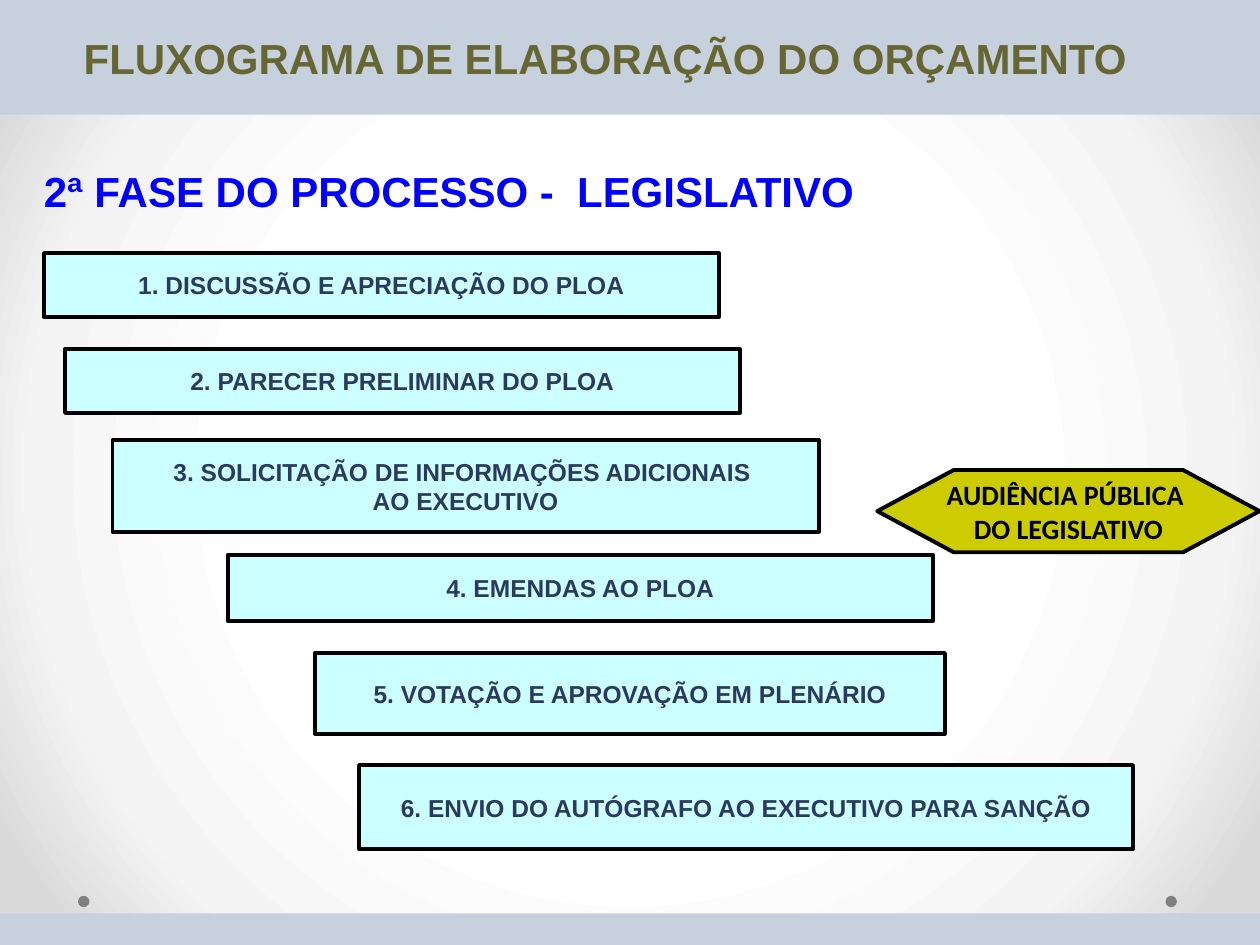
from pptx import Presentation
from pptx.dml.color import RGBColor
from pptx.enum.shapes import MSO_SHAPE as SHAPE
from pptx.enum.text import MSO_ANCHOR as ANCHOR, PP_ALIGN as ALIGN
from pptx.oxml import parse_xml
from pptx.oxml.ns import nsdecls, qn
from pptx.util import Pt

BAND = RGBColor(0xC7, 0xD1, 0xDE)
DOT = RGBColor(0x80, 0x80, 0x80)
OLIVE = RGBColor(0x66, 0x66, 0x33)
BLUE = RGBColor(0x00, 0x00, 0xFF)
CYAN = RGBColor(0xCC, 0xFF, 0xFF)
NAVY = RGBColor(0x2C, 0x39, 0x5E)
MUSTARD = RGBColor(0xCC, 0xCC, 0x00)
BLACK = RGBColor(0x00, 0x00, 0x00)


def add_block(kind, x, y, w, h, fill, outlined=False):
    sp = s.shapes.add_shape(kind, Pt(x), Pt(y), Pt(w), Pt(h))
    sp.shadow.inherit = False
    sp.fill.solid()
    sp.fill.fore_color.rgb = fill
    if outlined:
        sp.line.color.rgb = BLACK
        sp.line.width = Pt(2.25)
    else:
        sp.line.fill.background()
    return sp


def write(sp, text, size=14, color=NAVY, font="Arial", align=ALIGN.CENTER,
          anchor=ANCHOR.MIDDLE, wrap=False):
    """Fill a shape with bold text, one paragraph per line."""
    tf = sp.text_frame
    tf.word_wrap = wrap
    tf.vertical_anchor = anchor
    tf.text = text
    for p in tf.paragraphs:
        p.alignment = align
        f = p.font
        f.name, f.size, f.bold = font, Pt(size), True
        f.color.rgb = color


prs = Presentation()
prs.slide_width, prs.slide_height = Pt(720), Pt(540)
s = prs.slides.add_slide(prs.slide_layouts[6])

# Background: white centre fading to grey corners
s.background.fill.gradient()
grad = s.element.find(".//" + qn("a:gradFill"))
stops = "".join(
    f'<a:gs pos="{pos}000"><a:srgbClr val="{color}"/></a:gs>'
    for pos, color in ((50, "FFFFFF"), (76, "F4F4F4"), (92, "DADADA")))
grad.getparent().replace(grad, parse_xml(
    f'<a:gradFill {nsdecls("a")} rotWithShape="1"><a:gsLst>{stops}</a:gsLst>'
    '<a:path path="circle"><a:fillToRect l="50000" t="50000" r="50000" b="50000"/>'
    '</a:path></a:gradFill>'))

for x in (666, 44.6):
    add_block(SHAPE.OVAL, x, 511.9, 6.5, 6.5, DOT)

# Bands and headings
for y, h in ((0, 65.5), (522, 20)):
    add_block(SHAPE.RECTANGLE, 0, y, 720, h, BAND)

title = s.shapes.add_textbox(Pt(-10.8), Pt(15.1), Pt(720), Pt(36.7))
write(title, "FLUXOGRAMA DE ELABORAÇÃO DO ORÇAMENTO ", size=24, color=OLIVE,
      anchor=ANCHOR.TOP, wrap=True)
phase = s.shapes.add_textbox(Pt(18), Pt(91.2), Pt(649), Pt(36.7))
write(phase, "2ª FASE DO PROCESSO -  LEGISLATIVO", size=24, color=BLUE,
      align=ALIGN.LEFT, anchor=ANCHOR.TOP, wrap=True)

# Staircase of legislative steps
steps = [
    (25.2, 144.6, 385.5, 36.7, "DISCUSSÃO E APRECIAÇÃO DO PLOA"),
    (37.2, 199.3, 385.5, 36.7, "PARECER PRELIMINAR DO PLOA"),
    (64.3, 251.5, 403.5, 52.5,
     "SOLICITAÇÃO DE INFORMAÇÕES ADICIONAIS \nAO EXECUTIVO"),
    (130.2, 317, 402.8, 38, "EMENDAS AO PLOA"),
    (180, 373.2, 360, 46, "VOTAÇÃO E APROVAÇÃO EM PLENÁRIO"),
    (205.2, 437.2, 442.2, 48.2, "ENVIO DO AUTÓGRAFO AO EXECUTIVO PARA SANÇÃO"),
]
for number, (x, y, w, h, text) in enumerate(steps, 1):
    step = add_block(SHAPE.RECTANGLE, x, y, w, h, CYAN, outlined=True)
    write(step, f"{number}. {text}")

hearing = add_block(SHAPE.FLOWCHART_PREPARATION, 501.3, 268.6, 218.4, 47,
                    MUSTARD, outlined=True)
write(hearing, "AUDIÊNCIA PÚBLICA \nDO LEGISLATIVO", size=16, color=BLACK,
      font="Calibri")

prs.save("out.pptx")
